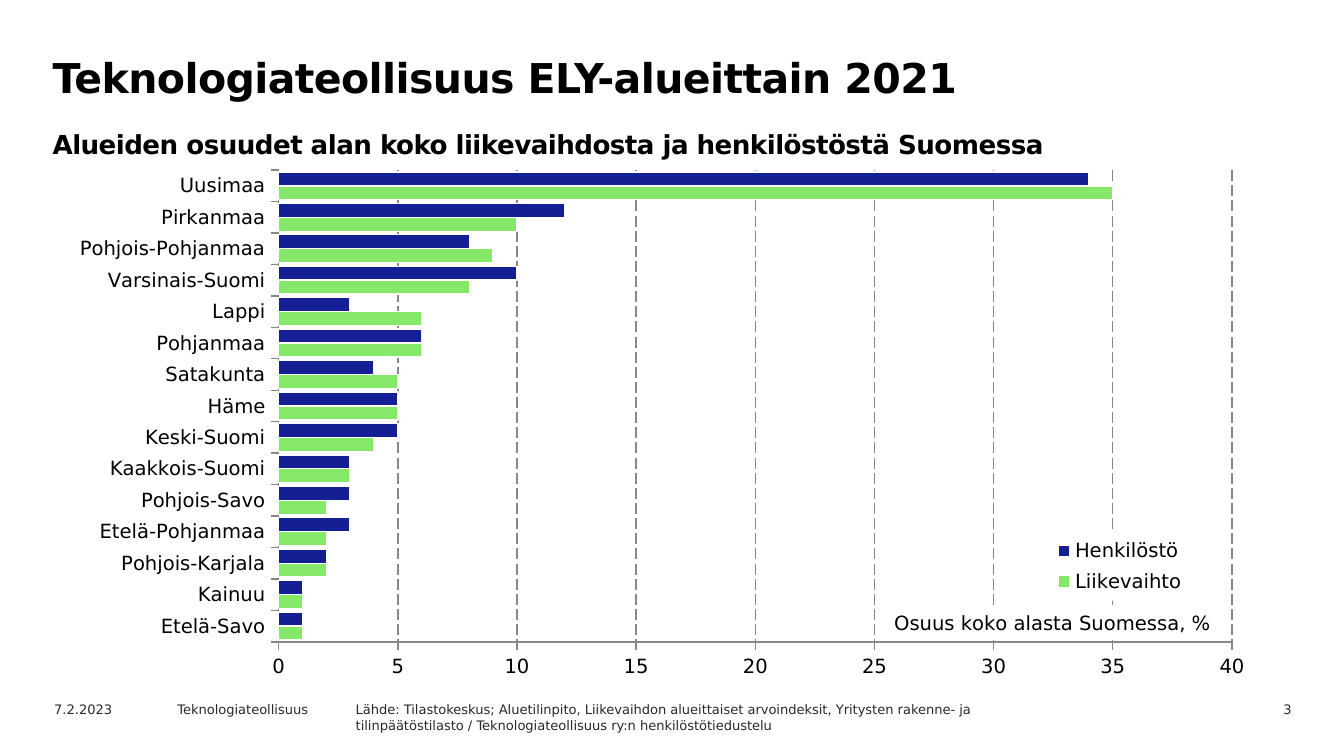
from lxml import etree
from pptx import Presentation
from pptx.chart.data import CategoryChartData
from pptx.dml.color import RGBColor
from pptx.enum.chart import XL_CHART_TYPE, XL_LEGEND_POSITION, XL_TICK_MARK
from pptx.enum.dml import MSO_LINE
from pptx.enum.text import PP_ALIGN
from pptx.oxml import parse_xml
from pptx.oxml.ns import nsdecls, qn
from pptx.util import Pt

BAR = XL_CHART_TYPE.BAR_CLUSTERED
LEGEND_RIGHT = XL_LEGEND_POSITION.RIGHT
TICK_OUTSIDE = XL_TICK_MARK.OUTSIDE
DASH = MSO_LINE.LONG_DASH
LEFT, RIGHT = PP_ALIGN.LEFT, PP_ALIGN.RIGHT

BLACK, WHITE, INK, GREY = "000000", "FFFFFF", "29282E", "878787"

# Region, share of turnover, share of personnel; listed from the bottom bar up
REGIONS = [
    ("Etelä-Savo", 1, 1),
    ("Kainuu", 1, 1),
    ("Pohjois-Karjala", 2, 2),
    ("Etelä-Pohjanmaa", 2, 3),
    ("Pohjois-Savo", 2, 3),
    ("Kaakkois-Suomi", 3, 3),
    ("Keski-Suomi", 4, 5),
    ("Häme", 5, 5),
    ("Satakunta", 5, 4),
    ("Pohjanmaa", 6, 6),
    ("Lappi", 6, 3),
    ("Varsinais-Suomi", 8, 10),
    ("Pohjois-Pohjanmaa", 9, 8),
    ("Pirkanmaa", 10, 12),
    ("Uusimaa", 35, 34),
]
SERIES = [("Liikevaihto", "85E869"), ("Henkilöstö", "141F94")]
FOOTERS = [
    (631, 68, "3", RIGHT),
    (22, 72, "7.2.2023", LEFT),
    (88, 102, "Teknologiateollisuus", LEFT),
    (183.5, 380, "Lähde: Tilastokeskus; Aluetilinpito, Liikevaihdon alueittaiset "
     "arvoindeksit, Yritysten rakenne- ja tilinpäätöstilasto / "
     "Teknologiateollisuus ry:n henkilöstötiedustelu", LEFT),
]


def color(value):
    return RGBColor.from_string(value)


def set_layout(element, index, x, y, width=None, height=None, inner=False):
    """Place a chart part by fractions of the chart area."""
    for old in element.findall(qn("c:layout")):
        element.remove(old)
    layout = parse_xml(f"<c:layout {nsdecls('c')}><c:manualLayout/></c:layout>")
    values = [("layoutTarget", "inner")] if inner else []
    values += [("xMode", "edge"), ("yMode", "edge"), ("x", x), ("y", y)]
    if width is not None:
        values += [("w", width), ("h", height)]
    for name, value in values:
        etree.SubElement(layout[0], qn(f"c:{name}")).set("val", str(value))
    element.insert(index, layout)


class SlideBuilder:
    font_name = "DejaVu Sans"

    def __init__(self, slide):
        self.slide = slide

    def style(self, font, size, hex_color, bold=False):
        font.name = self.font_name
        font.size = Pt(size)
        font.bold = bold
        font.color.rgb = color(hex_color)

    def text_frame(self, left, top, width, height, inset_x, inset_y):
        box = self.slide.shapes.add_textbox(Pt(left), Pt(top), Pt(width), Pt(height))
        frame = box.text_frame
        frame.word_wrap = True
        frame.margin_left = frame.margin_right = Pt(inset_x)
        frame.margin_top = frame.margin_bottom = Pt(inset_y)
        return frame

    def heading(self, lines):
        frame = self.text_frame(20, 22.3, 629, 51, 8.2, 5.4)
        for index, (text, size) in enumerate(lines):
            paragraph = frame.add_paragraph() if index else frame.paragraphs[0]
            paragraph.line_spacing = Pt(27)
            if index:
                paragraph.space_before = Pt(4)
            run = paragraph.add_run()
            run.text = text
            self.style(run.font, size, BLACK, bold=True)
            run._r.get_or_add_rPr().set("spc", "-30")

    def footer(self, left, width, text, alignment):
        frame = self.text_frame(left, 372.2, width, 13, 7.2, 3.6)
        paragraph = frame.paragraphs[0]
        paragraph.alignment = alignment
        run = paragraph.add_run()
        run.text = text
        self.style(run.font, 7, INK)

    def axis(self, axis):
        axis.major_tick_mark = TICK_OUTSIDE
        axis.format.line.color.rgb = color(GREY)
        axis.format.line.width = Pt(0.75)
        self.style(axis.tick_labels.font, 10.5, BLACK)

    def value_axis(self, axis, title):
        self.axis(axis)
        axis.minimum_scale, axis.maximum_scale, axis.major_unit = 0, 40, 5
        axis.tick_labels.number_format = "0"
        axis.tick_labels.number_format_is_linked = False
        axis.has_major_gridlines = True
        gridline = axis.major_gridlines.format.line
        gridline.color.rgb = color(GREY)
        gridline.width = Pt(0.75)
        gridline.dash_style = DASH
        axis_title = axis.axis_title
        run = axis_title.text_frame.paragraphs[0].add_run()
        run.text = title
        self.style(run.font, 10.5, BLACK)
        axis_title.format.fill.solid()
        axis_title.format.fill.fore_color.rgb = color(WHITE)
        set_layout(axis_title._element, 1, 0.69, 0.85)

    def legend(self, chart):
        chart.has_legend = True
        legend = chart.legend
        legend.position = LEGEND_RIGHT
        legend.include_in_layout = True
        self.style(legend.font, 10.5, BLACK)
        set_layout(legend._element, 1, 0.82, 0.71, 0.12, 0.13)
        legend._element.find(qn("c:overlay")).addnext(parse_xml(
            f"<c:spPr {nsdecls('c', 'a')}><a:solidFill>"
            f'<a:srgbClr val="{WHITE}"/></a:solidFill></c:spPr>'))

    def bar_chart(self, regions, series_styles, axis_title):
        data = CategoryChartData()
        names, *shares = zip(*regions)
        data.categories = names
        for (name, _), values in zip(series_styles, shares):
            data.add_series(name, values)
        chart = self.slide.shapes.add_chart(
            BAR, Pt(31), Pt(83.5), Pt(646.5), Pt(283.7), data).chart
        chart.has_title = False
        self.style(chart.font, 12, INK)
        plot = chart.plots[0]
        plot.gap_width = 25
        plot.overlap = 0
        plot.vary_by_categories = False
        for series, (_, fill) in zip(plot.series, series_styles):
            series.format.fill.solid()
            series.format.fill.fore_color.rgb = color(fill)
            series.format.line.color.rgb = color(WHITE)
            series.format.line.width = Pt(0.75)
        self.axis(chart.category_axis)
        self.value_axis(chart.value_axis, axis_title)
        self.legend(chart)
        set_layout(chart._chartSpace.chart.plotArea, 0,
                   0.183, 0.027, 0.79, 0.891, inner=True)


def main():
    presentation = Presentation()
    presentation.slide_width = Pt(720)
    presentation.slide_height = Pt(405)
    builder = SlideBuilder(presentation.slides.add_slide(presentation.slide_layouts[6]))
    builder.heading([
        ("Teknologiateollisuus ELY-alueittain 2021", 22),
        ("Alueiden osuudet alan koko liikevaihdosta ja henkilöstöstä Suomessa", 14),
    ])
    for footer in FOOTERS:
        builder.footer(*footer)
    builder.bar_chart(REGIONS, SERIES, "Osuus koko alasta Suomessa, %")
    presentation.save("out.pptx")


if __name__ == "__main__":
    main()
